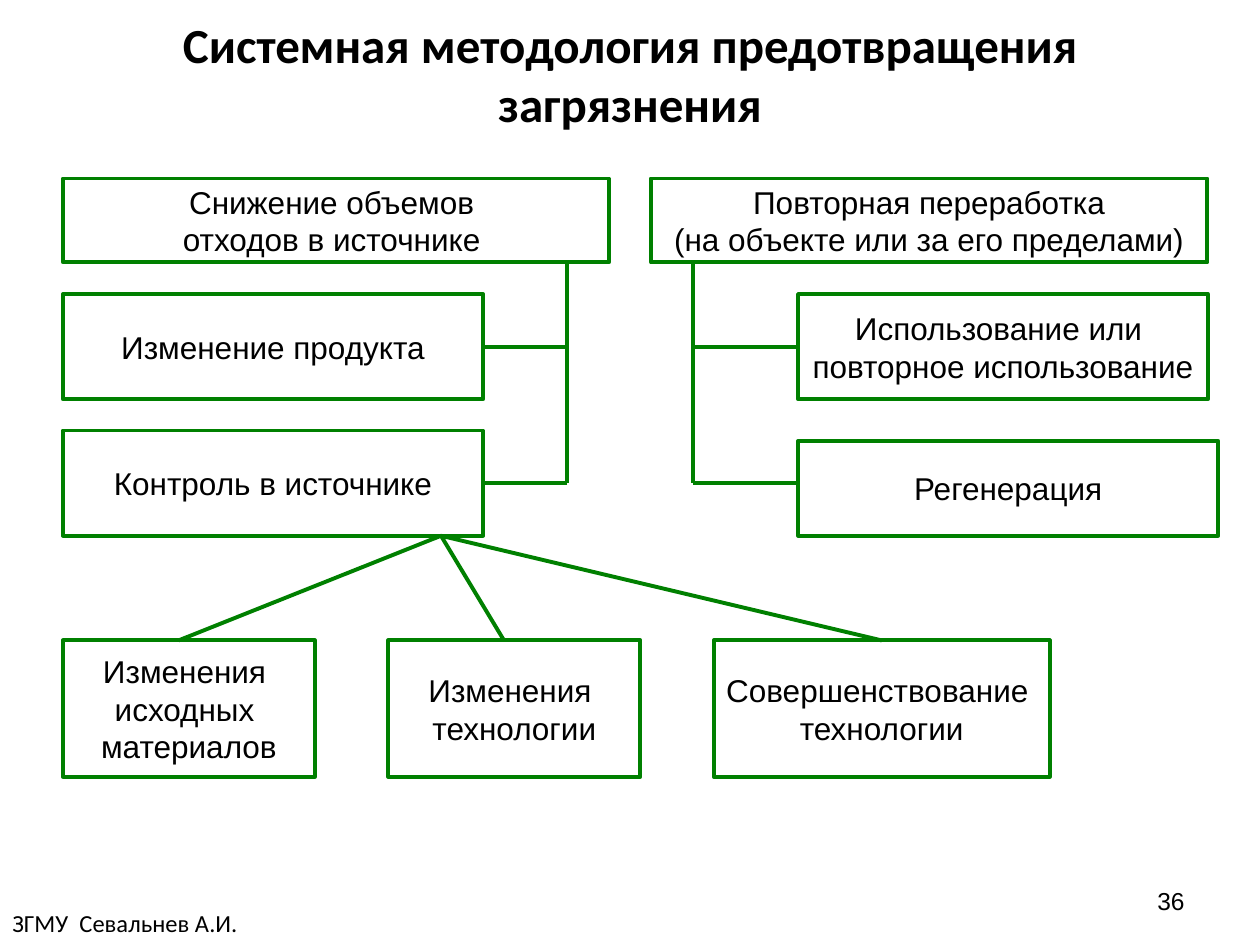
from lxml import etree
from pptx import Presentation
from pptx.dml.color import RGBColor
from pptx.enum.shapes import MSO_CONNECTOR, MSO_SHAPE
from pptx.enum.text import MSO_ANCHOR, PP_ALIGN
from pptx.oxml.ns import qn
from pptx.util import Cm, Pt

GREEN = RGBColor(0x00, 0x80, 0x00)
BLACK = RGBColor(0x00, 0x00, 0x00)
RECT = MSO_SHAPE.RECTANGLE
LINE = MSO_CONNECTOR.STRAIGHT
LEFT, CENTER, RIGHT = PP_ALIGN.LEFT, PP_ALIGN.CENTER, PP_ALIGN.RIGHT
TOP, MIDDLE = MSO_ANCHOR.TOP, MSO_ANCHOR.MIDDLE
SIDE_TOP, SIDE_LEFT, SIDE_RIGHT = 0, 1, 3


class Chart:
    """Style and current slide of the block diagram."""
    stroke = Pt(2.25)

    def __init__(self, slide):
        self.slide = slide

    def letter(self, frame, text, size, font, align, anchor, bold=False):
        frame.text = text
        frame.vertical_anchor = anchor
        for para in frame.paragraphs:
            para.alignment = align
            for run in para.runs:
                run.font.size = Pt(size)
                run.font.name = font
                run.font.bold = bold
                run.font.color.rgb = BLACK

    def label(self, x, y, w, h, text, size, font, align, anchor=MIDDLE, bold=False):
        box = self.slide.shapes.add_textbox(Cm(x), Cm(y), Cm(w), Cm(h))
        box.text_frame.word_wrap = True
        self.letter(box.text_frame, text, size, font, align, anchor, bold)

    def block(self, x, y, w, h, text):
        box = self.slide.shapes.add_shape(RECT, Cm(x), Cm(y), Cm(w), Cm(h))
        box.shadow.inherit = False
        box.fill.background()
        box.line.color.rgb = GREEN
        box.line.width = self.stroke
        box.text_frame.word_wrap = False
        self.letter(box.text_frame, text, 18, "Arial", CENTER, MIDDLE)
        return box

    def link(self, x1, y1, x2, y2, box=None, side=None):
        """Draw a line; when a box is given, the end is joined to its side."""
        line = self.slide.shapes.add_connector(LINE, Cm(x1), Cm(y1), Cm(x2), Cm(y2))
        line.line.color.rgb = GREEN
        line.line.width = self.stroke
        etree.SubElement(line._element.spPr, qn("a:effectLst"))
        if box is not None:
            line.end_connect(box, side)


def main():
    deck = Presentation()
    deck.slide_width, deck.slide_height = Cm(25.4), Cm(19.05)
    chart = Chart(deck.slides.add_slide(deck.slide_layouts[6]))

    # Title, footer and page number
    chart.label(1.27, 0.42, 22.86, 2.12,
                "Системная методология предотвращения загрязнения",
                28, "Calibri", CENTER, bold=True)
    chart.label(0, 18.19, 6.91, 0.86, "ЗГМУ  Севальнев А.И.", 14, "Calibri", LEFT, TOP)
    chart.label(18.2, 17.65, 5.93, 1.02, "36", 14, "Arial", RIGHT)

    # Left branch
    left, wide = 1.27, 8.47
    chart.block(left, 3.6, 11.01, 1.69, "Снижение объемов \nотходов в источнике ")
    product = chart.block(left, 5.93, wide, 2.12, "Изменение продукта")
    control = chart.block(left, 8.68, wide, 2.12, "Контроль в источнике")

    # Right branch
    right = 16.09
    chart.block(13.12, 3.6, 11.22, 1.69,
                "Повторная переработка\n(на объекте или за его пределами)")
    reuse = chart.block(right, 5.93, 8.26, 2.12,
                        "Использование или \nповторное использование")
    chart.block(right, 8.89, wide, 1.91, "Регенерация")

    # Bottom row
    row, tall = 12.91, 2.75
    chart.block(left, row, 5.08, tall, "Изменения \nисходных \nматериалов")
    chart.block(7.83, row, 5.08, tall, "Изменения \nтехнологии")
    better = chart.block(14.39, row, 6.77, tall, "Совершенствование \nтехнологии")

    # Trunks and their branches
    head, high, low = 5.29, 6.99, 9.74
    trunk, stem = 11.43, 13.97
    for x in (trunk, stem):
        chart.link(x, head, x, low)
    chart.link(trunk, high, left + wide, high, product, SIDE_RIGHT)
    chart.link(trunk, low, left + wide, low, control, SIDE_RIGHT)
    chart.link(stem, high, right, high, reuse, SIDE_LEFT)
    chart.link(stem, low, right, low)

    # Fan from source control to the bottom row
    for x, box in ((3.6, None), (10.16, None), (17.78, better)):
        chart.link(8.89, 10.8, x, row, box, SIDE_TOP)

    deck.save("out.pptx")


if __name__ == "__main__":
    main()
